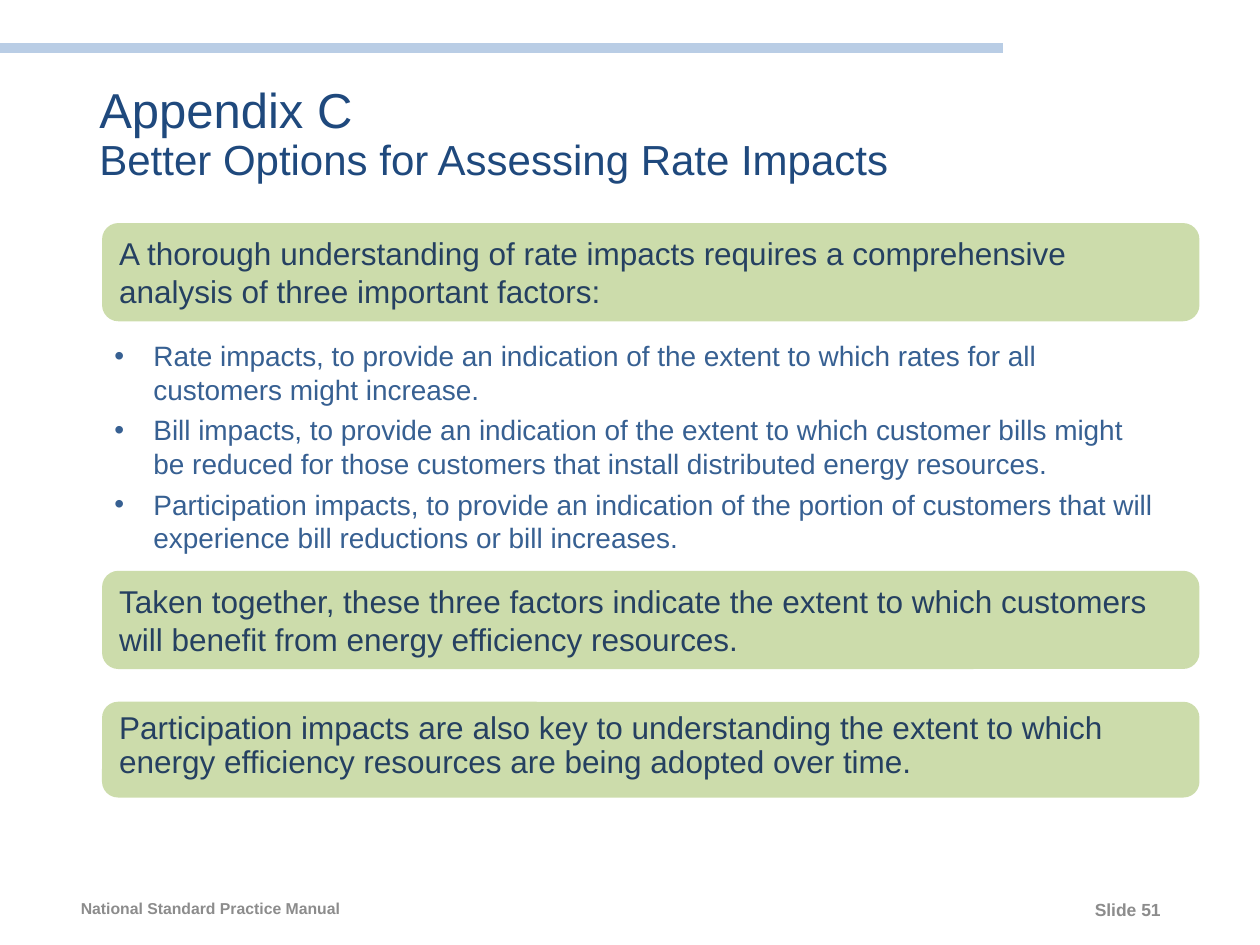
from dataclasses import dataclass

from lxml.etree import SubElement
from pptx import Presentation
from pptx.dml.color import RGBColor
from pptx.enum.shapes import MSO_CONNECTOR as Connector, MSO_SHAPE as Preset
from pptx.enum.text import MSO_ANCHOR as Anchor, PP_ALIGN as Align
from pptx.oxml.ns import qn
from pptx.util import Inches, Pt


@dataclass(frozen=True)
class Theme:
    font: str = "Arial"
    rule: str = "B9CDE5"
    title: str = "1F497D"
    card: str = "9BBB59"
    card_text: str = "254061"
    bullet_text: str = "376092"
    panel: str = "FFFFFF"
    footer: str = "8C8C8C"
    title_size: int = 28
    subtitle_size: int = 24
    card_size: int = 18
    bullet_size: int = 16
    number_size: int = 10
    footer_size: int = 9
    rule_width: int = 6
    card_opacity: int = 50


@dataclass(frozen=True)
class Box:
    left: float
    top: float
    width: float
    height: float

    def lengths(self):
        return tuple(Inches(value) for value in (self.left, self.top, self.width, self.height))


@dataclass(frozen=True)
class Card:
    top: float
    height: float
    text: str
    line_spacing: float = 1.0


THEME = Theme()
SLIDE_WIDTH, SLIDE_HEIGHT = 10, 7.5
CONTENT_LEFT, CARD_WIDTH = 0.81, 8.71
TEXT_RIGHT = 9.31
HANGING_INDENT = 0.31
RULE_TOP, RULE_RIGHT = 0.38, 7.96

CARDS = (
    Card(1.77, 0.78, "A thorough understanding of rate impacts requires a comprehensive "
         "analysis of three important factors:"),
    Card(4.53, 0.78, "Taken together, these three factors indicate the extent to which "
         "customers will benefit from energy efficiency resources."),
    Card(5.57, 0.76, "Participation impacts are also key to understanding the extent to which "
         "energy efficiency resources are being adopted over time.", 0.9),
)
FACTORS = (
    "Rate impacts, to provide an indication of the extent to which rates for all customers "
    "might increase.",
    "Bill impacts, to provide an indication of the extent to which customer bills might be "
    "reduced for those customers that install distributed energy resources.",
    "Participation impacts, to provide an indication of the portion of customers that will "
    "experience bill reductions or bill increases.",
)


def add_run(paragraph, text: str, size: int, color: str, bold: bool = False) -> None:
    run = paragraph.add_run()
    run.text = text
    run.font.name = THEME.font
    run.font.size = Pt(size)
    run.font.bold = bold
    run.font.color.rgb = RGBColor.from_string(color)


def add_text_box(slide, box: Box, align: Align = Align.LEFT):
    frame = slide.shapes.add_textbox(*box.lengths()).text_frame
    frame.word_wrap = True
    frame.vertical_anchor = Anchor.MIDDLE
    paragraph = frame.paragraphs[0]
    paragraph.alignment = align
    return paragraph


def add_panel(slide, preset: Preset, box: Box, color: str):
    shape = slide.shapes.add_shape(preset, *box.lengths())
    shape.shadow.inherit = False
    shape.fill.solid()
    shape.fill.fore_color.rgb = RGBColor.from_string(color)
    shape.line.fill.background()
    shape.text_frame.word_wrap = True
    shape.text_frame.vertical_anchor = Anchor.TOP
    return shape


def add_rule(slide) -> None:
    top = Inches(RULE_TOP)
    rule = slide.shapes.add_connector(Connector.STRAIGHT, 0, top, Inches(RULE_RIGHT), top)
    rule.line.color.rgb = RGBColor.from_string(THEME.rule)
    rule.line.width = Pt(THEME.rule_width)
    SubElement(rule.element.spPr, qn("a:effectLst"))


def add_title(slide) -> None:
    paragraph = add_text_box(slide, Box(0.69, 0.56, TEXT_RIGHT - 0.69, 1.03))
    paragraph.line_spacing = 0.9
    add_run(paragraph, "Appendix C", THEME.title_size, THEME.title)
    paragraph.add_line_break()
    add_run(paragraph, "Better Options for Assessing Rate Impacts", THEME.subtitle_size, THEME.title)


def add_card(slide, card: Card) -> None:
    box = Box(CONTENT_LEFT, card.top, CARD_WIDTH, card.height)
    shape = add_panel(slide, Preset.ROUNDED_RECTANGLE, box, THEME.card)
    color = shape.element.spPr.find(qn("a:solidFill"))[0]
    SubElement(color, qn("a:alpha"), val=str(THEME.card_opacity * 1000))
    paragraph = shape.text_frame.paragraphs[0]
    paragraph.alignment = Align.LEFT
    paragraph.line_spacing = card.line_spacing
    add_run(paragraph, card.text, THEME.card_size, THEME.card_text)


def add_bullets(slide, box: Box, items: tuple[str, ...]) -> None:
    frame = add_panel(slide, Preset.RECTANGLE, box, THEME.panel).text_frame
    for index, item in enumerate(items):
        paragraph = frame.add_paragraph() if index else frame.paragraphs[0]
        paragraph.alignment = Align.LEFT
        paragraph.space_after = Pt(4)
        properties = paragraph._p.get_or_add_pPr()
        indent = Inches(HANGING_INDENT)
        properties.set("marL", str(indent))
        properties.set("indent", str(-indent))
        SubElement(properties, qn("a:buFont"), typeface=THEME.font)
        SubElement(properties, qn("a:buChar"), char="•")
        add_run(paragraph, item, THEME.bullet_size, THEME.bullet_text)


def add_footer(slide) -> None:
    name = add_text_box(slide, Box(0, 7.01, 3.34, 0.4), Align.CENTER)
    add_run(name, "National Standard Practice Manual", THEME.footer_size, THEME.footer, True)
    number = add_text_box(slide, Box(TEXT_RIGHT - 2.25, 7.03, 2.25, 0.38), Align.RIGHT)
    add_run(number, "Slide 51", THEME.number_size, THEME.footer, True)


def main() -> None:
    presentation = Presentation()
    presentation.slide_width = Inches(SLIDE_WIDTH)
    presentation.slide_height = Inches(SLIDE_HEIGHT)
    slide = presentation.slides.add_slide(presentation.slide_layouts[6])
    add_rule(slide)
    add_title(slide)
    add_bullets(slide, Box(CONTENT_LEFT, 2.64, TEXT_RIGHT - CONTENT_LEFT, 1.83), FACTORS)
    for card in CARDS:
        add_card(slide, card)
    add_footer(slide)
    presentation.save("out.pptx")


if __name__ == "__main__":
    main()
